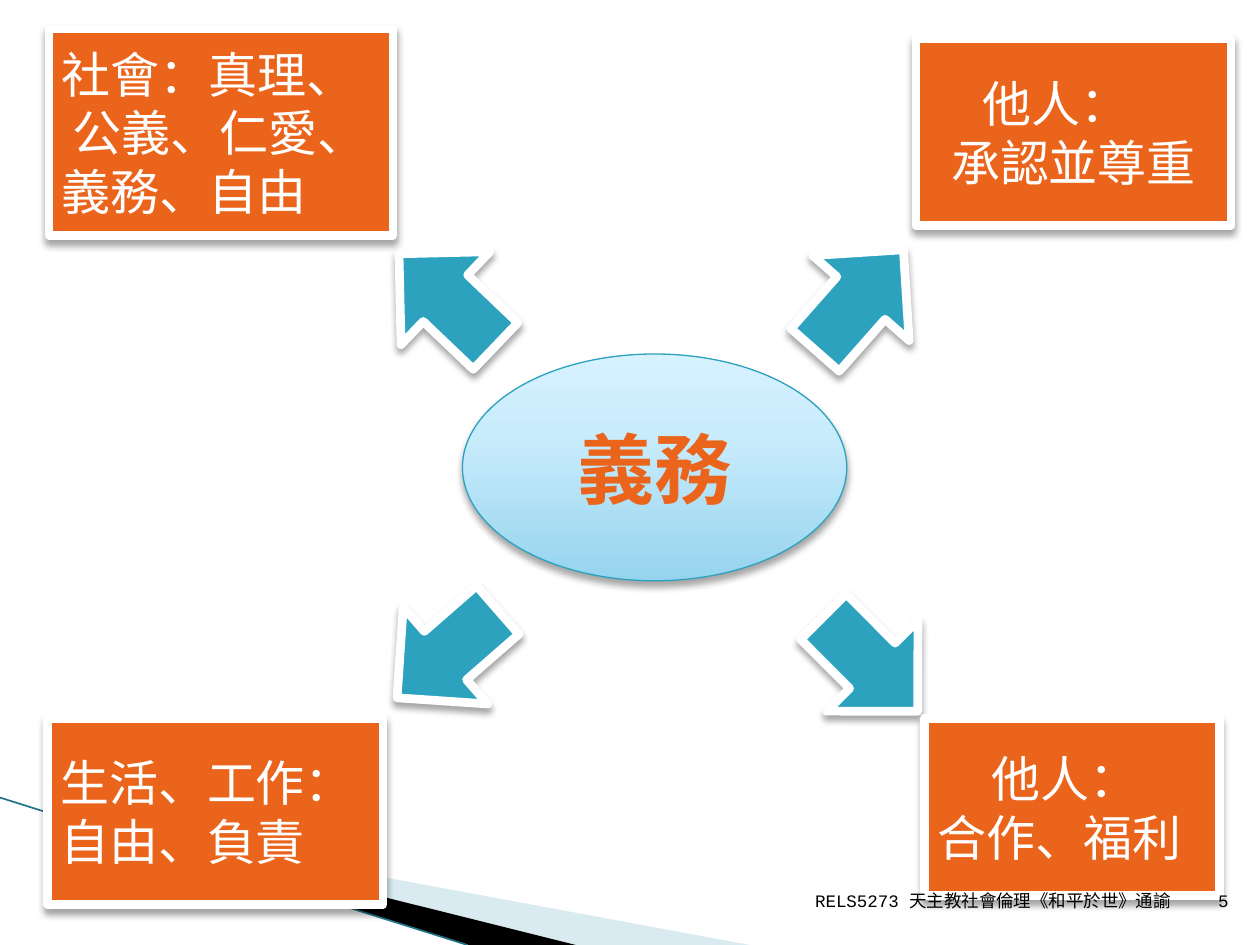
from lxml import etree
from pptx import Presentation
from pptx.dml.color import RGBColor
from pptx.enum.shapes import MSO_CONNECTOR, MSO_SHAPE
from pptx.enum.text import MSO_ANCHOR, PP_ALIGN
from pptx.oxml import parse_xml
from pptx.oxml.ns import nsdecls, qn
from pptx.util import Inches, Pt

LEFT, CENTER, RIGHT = PP_ALIGN.LEFT, PP_ALIGN.CENTER, PP_ALIGN.RIGHT
MIDDLE, BOTTOM = MSO_ANCHOR.MIDDLE, MSO_ANCHOR.BOTTOM
RECTANGLE, OVAL, ARROW = MSO_SHAPE.RECTANGLE, MSO_SHAPE.OVAL, MSO_SHAPE.RIGHT_ARROW
STRAIGHT = MSO_CONNECTOR.STRAIGHT

COLORS = {
    "orange": "EB641B", "teal": "2DA2BF", "white": "FFFFFF", "black": "000000",
    "pale": "A0CBDC", "edge": "1F7489",
    "sky_low": "96D4EE", "sky_mid": "C9ECFC", "sky_high": "D7F2FF",
}
FONT = "Courier New"


def rgb(name):
    return RGBColor.from_string(COLORS[name])


class SlideBuilder:
    """Holds the deck's style and the current slide."""

    def __init__(self, slide):
        self.slide = slide
        self.shapes = slide.shapes

    def style_paragraph(self, para, size, color, align, bold=False):
        para.alignment = align
        para.font.name = FONT
        para.font.size = Pt(size)
        para.font.bold = bold
        para.font.color.rgb = rgb(color)

    def add_shadow(self, shape):
        shape.shadow.inherit = False
        effects = shape._element.spPr.find(qn("a:effectLst"))
        effects.append(parse_xml(
            f'<a:outerShdw {nsdecls("a")} blurRad="{Pt(4)}" dist="{Pt(3)}" '
            'dir="5400000" rotWithShape="0"><a:srgbClr val="000000">'
            '<a:alpha val="35000"/></a:srgbClr></a:outerShdw>'))

    def shape(self, preset, place, fill, line="white", width=5):
        shape = self.shapes.add_shape(preset, *map(Inches, place))
        shape.fill.solid()
        shape.fill.fore_color.rgb = rgb(fill)
        shape.line.color.rgb = rgb(line)
        shape.line.width = Pt(width)
        self.add_shadow(shape)
        return shape

    def wedge(self, points, fill, opacity=100):
        start, *rest = [(Inches(x), Inches(y)) for x, y in points]
        builder = self.shapes.build_freeform(*start)
        builder.add_line_segments(rest, close=True)
        wedge = builder.convert_to_shape()
        wedge.fill.solid()
        wedge.fill.fore_color.rgb = rgb(fill)
        wedge.line.fill.background()
        wedge.shadow.inherit = False
        color = wedge._element.spPr.find(".//" + qn("a:srgbClr"))
        etree.SubElement(color, qn("a:alpha"), val=str(opacity * 1000))

    def line(self, start, end, color, width):
        line = self.shapes.add_connector(STRAIGHT, *map(Inches, start + end))
        line.line.color.rgb = rgb(color)
        line.line.width = Pt(width)
        etree.SubElement(line._element.spPr, qn("a:effectLst"))

    def arrow(self, left, top, angle):
        self.shape(ARROW, (left, top, 1.06, 1.02), "teal").rotation = angle

    def hub(self, place, text):
        hub = self.shape(OVAL, place, "sky_mid", "teal", 0.75)
        stops = "".join(
            f'<a:gs pos="{position * 1000}"><a:srgbClr val="{COLORS[name]}"/></a:gs>'
            for position, name in ((0, "sky_low"), (65, "sky_mid"), (100, "sky_high")))
        properties = hub._element.spPr
        properties.replace(properties.find(qn("a:solidFill")), parse_xml(
            f'<a:gradFill {nsdecls("a")} rotWithShape="1"><a:gsLst>{stops}</a:gsLst>'
            '<a:lin ang="16200000" scaled="0"/></a:gradFill>'))
        hub.text_frame.text = text
        hub.text_frame.vertical_anchor = MIDDLE
        self.style_paragraph(hub.text_frame.paragraphs[0], 44, "orange", CENTER, True)

    def card(self, place, lines):
        """Each line is (text, alignment, left indent in inches)."""
        frame = self.shape(RECTANGLE, place, "orange").text_frame
        frame.word_wrap = True
        frame.vertical_anchor = MIDDLE
        frame.text = "\n".join(text for text, _, _ in lines)
        for para, (_, align, indent) in zip(frame.paragraphs, lines):
            if indent:
                para._p.get_or_add_pPr().set("marL", str(Inches(indent)))
            self.style_paragraph(para, 28, "white", align)

    def footer(self, left, width, text, is_number=False):
        box = self.shapes.add_textbox(*map(Inches, (left, 6.88, width, 0.4)))
        frame = box.text_frame
        frame.word_wrap = True
        frame.vertical_anchor = BOTTOM
        para = frame.paragraphs[0]
        if is_number:
            para._p.append(parse_xml(
                f'<a:fld {nsdecls("a")} id="{{B6F15528-21DE-4FAA-801E-634DDDAF4B2B}}" '
                f'type="slidenum"><a:rPr lang="en-US" sz="1000"><a:latin typeface="{FONT}"/>'
                f'</a:rPr><a:t>{text}</a:t></a:fld>'))
        else:
            para.text = text
        self.style_paragraph(para, 10, "black", RIGHT)


def main():
    deck = Presentation()
    deck.slide_width, deck.slide_height = Inches(10), Inches(7.5)
    # The slide number shown is 5
    deck.element.set("firstSlideNum", "5")
    page = SlideBuilder(deck.slides.add_slide(deck.slide_layouts[6]))

    # Corner decoration
    page.wedge([(0.55, 6.5), (5.95, 7.5), (4.56, 7.5)], "pale", 40)
    page.wedge([(0.53, 6.49), (4.57, 7.5), (3.72, 7.5)], "black")
    page.line((0, 6.33), (3.71, 7.5), "edge", 0.95)

    # Central idea and its four arrows
    page.hub((3.67, 2.81, 3.05, 1.8), "義務")
    for left, top, angle in ((3.02, 1.87, 223.7), (6.29, 1.87, 311.4),
                             (3.02, 4.68, 138.9), (6.38, 4.76, 45.1)):
        page.arrow(left, top, angle)

    # Corner cards
    others = ("他人：", LEFT, 0.43)
    page.card((0.39, 0.23, 2.73, 1.64),
              [("社會：真理、\v 公義、仁愛、\v義務、自由", LEFT, 0)])
    page.card((0.38, 5.7, 2.66, 1.48), [("生活、工作：\v自由、負責", LEFT, 0)])
    page.card((7.27, 0.31, 2.5, 1.48), [others, ("承認並尊重", CENTER, 0)])
    page.card((7.34, 5.7, 2.34, 1.41), [others, ("合作、福利", LEFT, 0)])

    # Footer and slide number
    page.footer(6.25, 3.14, "RELS5273 天主教社會倫理《和平於世》通諭")
    page.footer(9.45, 0.4, "5", is_number=True)

    deck.save("out.pptx")


if __name__ == "__main__":
    main()
